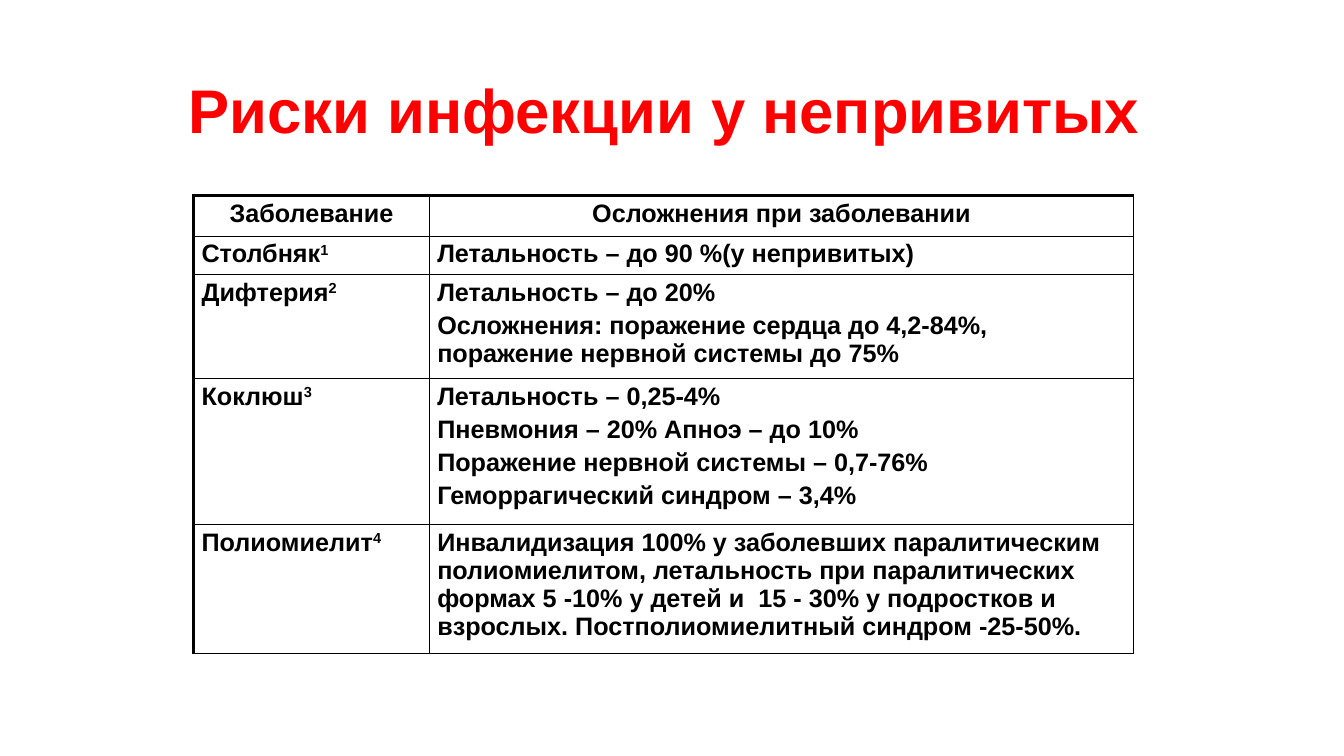
from lxml import etree
from pptx import Presentation
from pptx.dml.color import RGBColor
from pptx.enum import text as t
from pptx.oxml import ns
from pptx.util import Cm, Pt

# Content
TITLE = "Риски инфекции у непривитых"
HEADINGS = ("Заболевание", "Осложнения при заболевании")
DISEASES = [
    ("Столбняк", ["Летальность – до 90 %(у непривитых)"]),
    ("Дифтерия", ["Летальность – до 20%",
                  "Осложнения: поражение сердца до 4,2-84%, "
                  "поражение нервной системы до 75%"]),
    ("Коклюш", ["Летальность – 0,25-4%",
                "Пневмония – 20% Апноэ – до 10%",
                "Поражение нервной системы – 0,7-76%",
                "Геморрагический синдром – 3,4%"]),
    ("Полиомиелит", ["Инвалидизация 100% у заболевших паралитическим "
                     "полиомиелитом, летальность при паралитических формах "
                     "5 -10% у детей и  15 - 30% у подростков и взрослых. "
                     "Постполиомиелитный синдром -25-50%."]),
]
COLUMN_WIDTHS = (5.94, 17.75)
ROW_HEIGHTS = (1.02, 0.94, 2.62, 3.68, 3.23)
THIN, THICK = 1, 2.25
BLACK, RED = "000000", "FF0000"
TITLE_FORMAT = {"name": "Arial", "size": Pt(44), "bold": True}
CELL_FORMAT = {"name": "Arial", "size": Pt(18), "bold": True}
CELL_MARGINS = {"margin_left": Cm(0.2), "margin_right": Cm(0.2),
                "margin_top": Cm(0.1), "margin_bottom": Cm(0.1)}


def set_all(target, values):
    for name, value in values.items():
        setattr(target, name, value)


def color(target, code):
    target.rgb = RGBColor.from_string(code)


def add_span(para, words, values, code):
    span = para.add_run()
    span.text = words
    set_all(span.font, values)
    color(span.font.color, code)
    return span


def write_cell(cell, lines, align, note=None):
    set_all(cell, CELL_MARGINS)
    cell.fill.background()
    frame = cell.text_frame
    for number, line in enumerate(lines):
        para = frame.add_paragraph() if number else frame.paragraphs[0]
        para.alignment = align
        para.space_before = Pt(3.6 if number else 0)
        add_span(para, line, CELL_FORMAT, BLACK)
    if note:
        mark = add_span(para, str(note), CELL_FORMAT, BLACK)
        mark.font._element.set("baseline", "30000")


def add_borders(cell, widths):
    props = cell._tc.get_or_add_tcPr()
    for place, (side, width) in enumerate(widths.items()):
        line = etree.Element(ns.qn(f"a:ln{side}"), w=str(Pt(width)))
        fill = etree.SubElement(line, ns.qn("a:solidFill"))
        etree.SubElement(fill, ns.qn("a:srgbClr"), val=BLACK)
        props.insert(place, line)


deck = Presentation()
deck.slide_width, deck.slide_height = Cm(33.87), Cm(19.05)
page = deck.slides.add_slide(deck.slide_layouts[6])

# Title
box = page.shapes.add_textbox(Cm(3.73), Cm(1.93), Cm(26.04), Cm(1.63))
set_all(box.text_frame, {"word_wrap": True,
                         "vertical_anchor": t.MSO_ANCHOR.MIDDLE})
heading = box.text_frame.paragraphs[0]
heading.alignment = t.PP_ALIGN.CENTER
add_span(heading, TITLE, TITLE_FORMAT, RED)

# Table
table = page.shapes.add_table(
    len(ROW_HEIGHTS), len(COLUMN_WIDTHS), Cm(4.88), Cm(4.93),
    Cm(sum(COLUMN_WIDTHS)), Cm(sum(ROW_HEIGHTS))).table
set_all(table, {"first_row": False, "horz_banding": False})
for column, width in zip(table.columns, COLUMN_WIDTHS):
    column.width = Cm(width)
for row, height in zip(table.rows, ROW_HEIGHTS):
    row.height = Cm(height)

for column, words in enumerate(HEADINGS):
    write_cell(table.cell(0, column), [words], t.PP_ALIGN.CENTER)
for row, (disease, risks) in enumerate(DISEASES, 1):
    write_cell(table.cell(row, 0), [disease], t.PP_ALIGN.LEFT, note=row)
    write_cell(table.cell(row, 1), risks, t.PP_ALIGN.LEFT)

# Borders: thick on the left and top edges of the table
for row in range(len(ROW_HEIGHTS)):
    for column in range(len(COLUMN_WIDTHS)):
        add_borders(table.cell(row, column), {
            "L": THIN if column else THICK, "R": THIN,
            "T": THIN if row else THICK, "B": THIN})

deck.save("out.pptx")
